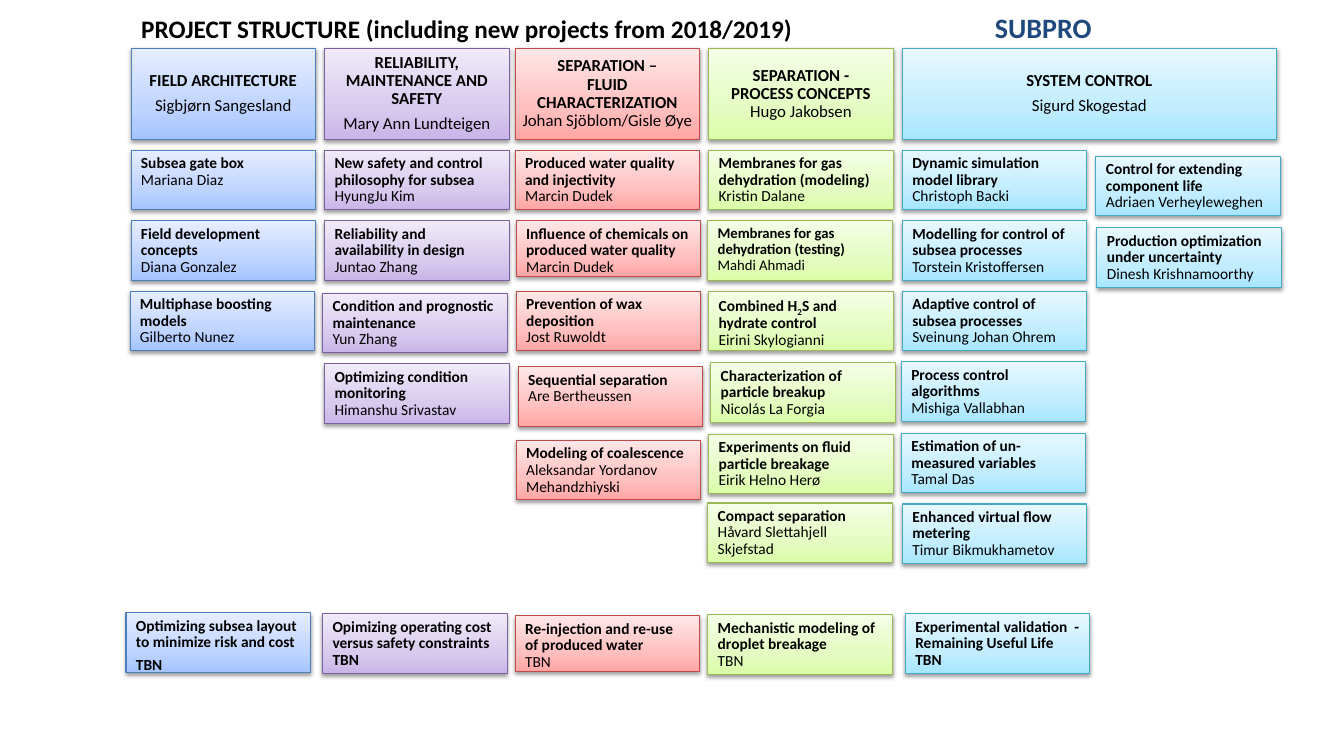
from copy import deepcopy

from lxml.etree import SubElement
from pptx import Presentation
from pptx.dml.color import RGBColor
from pptx.enum.shapes import MSO_SHAPE
from pptx.enum.text import MSO_ANCHOR, MSO_AUTO_SIZE, PP_ALIGN
from pptx.oxml.ns import qn
from pptx.util import Inches, Pt

BLACK = RGBColor(0x00, 0x00, 0x00)
NAVY = RGBColor(0x1F, 0x49, 0x7D)

# Each palette: line, then fill from bottom to top
BLUE = (RGBColor(0x4B, 0x7E, 0xBC), RGBColor(0xA4, 0xC4, 0xFF),
        RGBColor(0xBF, 0xD4, 0xFF), RGBColor(0xE6, 0xEE, 0xFF))
PURPLE = (RGBColor(0x7D, 0x60, 0xA0), RGBColor(0xC9, 0xB5, 0xE8),
          RGBColor(0xD8, 0xCB, 0xEE), RGBColor(0xF0, 0xEA, 0xF9))
RED = (RGBColor(0xBF, 0x4C, 0x48), RGBColor(0xFF, 0xA6, 0xA5),
       RGBColor(0xFF, 0xC0, 0xBF), RGBColor(0xFF, 0xE7, 0xE7))
GREEN = (RGBColor(0x98, 0xB9, 0x55), RGBColor(0xDA, 0xFD, 0xA7),
         RGBColor(0xE4, 0xFC, 0xC2), RGBColor(0xF5, 0xFF, 0xE7))
CYAN = (RGBColor(0x46, 0xAA, 0xC5), RGBColor(0xA7, 0xE6, 0xFF),
        RGBColor(0xC1, 0xED, 0xFF), RGBColor(0xE7, 0xF8, 0xFF))

# Grid in inches; LAST is the row of projects to be named
LEFT, TOP, PITCH, STEP = 1.3, 1.49, 1.91, 0.7
WIDE, TALL, SHORT = 1.83, 0.59, 0.55
LAST = 6.57

# Palette, title, leader, width, gap after title, nudge
HEADS = [
    (BLUE, "FIELD ARCHITECTURE", "Sigbjørn Sangesland", WIDE, 5, 0),
    (PURPLE, "RELIABILITY, MAINTENANCE AND SAFETY", "Mary Ann Lundteigen", WIDE, 5, 0.01),
    (RED, "SEPARATION –\vFLUID CHARACTERIZATION", "Johan Sjöblom/Gisle Øye", WIDE, 0, -0.01),
    (GREEN, "SEPARATION -\vPROCESS CONCEPTS", "Hugo Jakobsen", WIDE, 0, 0),
    (CYAN, "SYSTEM CONTROL", "Sigurd Skogestad", 3.71, 5, 0.01),
]

# Per column: row, title, person, nudge across, nudge down, options
CARDS = [
    (BLUE, [
        (0, "Subsea gate box", "Mariana Diaz", 0, 0, {}),
        (1, "Field development\vconcepts", "Diana Gonzalez", 0, 0, {}),
        (2, "Multiphase boosting models", "Gilberto Nunez", -0.01, 0, {}),
        (LAST, "Optimizing subsea layout to minimize risk and cost", "TBN",
         -0.05, -0.01, {"bold": True, "gap": 4.5}),
    ]),
    (PURPLE, [
        (0, "New safety and control philosophy for subsea", "HyungJu Kim", 0.01, 0, {}),
        (1, "Reliability and availability in design", "Juntao Zhang", 0.01, 0, {}),
        (2, "Condition and prognostic maintenance", "Yun Zhang", -0.01, 0.02, {}),
        (3, "Optimizing condition monitoring", "Himanshu Srivastav", 0.01, 0.02, {}),
        (LAST, "Opimizing operating cost versus safety constraints", "TBN",
         -0.01, 0, {"bold": True}),
    ]),
    (RED, [
        (0, "Produced water quality and injectivity", "Marcin Dudek", -0.01, 0, {}),
        (1, "Influence of chemicals on produced water quality", "Marcin Dudek",
         0, 0, {"high": SHORT}),
        (2, "Prevention of wax deposition", "Jost Ruwoldt", 0, 0, {}),
        (3, "Sequential separation", "Are Bertheussen", 0.02, 0.05, {}),
        (4, "Modeling of coalescence", "Aleksandar Yordanov Mehandzhiyski", 0, 0.08, {}),
        (LAST, "Re-injection and re-use of produced water", "TBN",
         -0.01, 0.02, {"high": SHORT}),
    ]),
    (GREEN, [
        (0, "Membranes for gas dehydration (modeling)", "Kristin Dalane", 0, 0, {}),
        (1, "Membranes for gas dehydration (testing)", "Mahdi Ahmadi",
         -0.01, 0, {"size": 10.5}),
        (2, "Combined H|2|S and hydrate control", "Eirini Skylogianni", 0, 0, {}),
        (3, "Characterization of particle breakup", "Nicolás La Forgia", 0.02, 0.01, {}),
        (4, "Experiments on fluid particle breakage", "Eirik Helno Herø", 0, 0.02, {}),
        (5, "Compact separation", "Håvard Slettahjell Skjefstad", -0.01, 0, {}),
        (LAST, "Mechanistic modeling of droplet breakage", "TBN", -0.01, 0.01, {}),
    ]),
    (CYAN, [
        (0, "Dynamic simulation model library", "Christoph Backi", 0.01, 0, {}),
        (1, "Modelling for control of subsea processes", "Torstein Kristoffersen", 0.01, 0, {}),
        (2, "Adaptive control of subsea processes", "Sveinung Johan Ohrem", 0.01, 0, {}),
        (3, "Process control algorithms", "Mishiga Vallabhan", 0, 0, {}),
        (4, "Estimation of un-measured variables", "Tamal Das", 0, 0.01, {}),
        (5, "Enhanced virtual flow metering", "Timur Bikmukhametov", 0.01, 0.01, {}),
        (LAST, "Experimental validation  - Remaining Useful Life", "TBN",
         0.04, 0, {"bold": True}),
    ]),
    (CYAN, [
        (0, "Control for extending component life", "Adriaen Verheyleweghen", 0.02, 0.06, {}),
        (1, "Production optimization under uncertainty", "Dinesh Krishnamoorthy",
         0.03, 0.07, {}),
    ]),
]


class Board:
    """Style and slide of the project chart."""

    font = "Calibri"

    def __init__(self, deck):
        self.slide = deck.slides.add_slide(deck.slide_layouts[5])

    def style(self, para, size, bold, color=BLACK):
        for run in para.runs:
            font = run.font
            font.name, font.size, font.bold = self.font, Pt(size), bold
            font.color.rgb = color

    def label(self, shape, text, box, size, color=BLACK):
        shape.left, shape.top, shape.width, shape.height = map(Inches, box)
        frame = shape.text_frame
        frame.text = text
        frame.word_wrap = False
        frame.auto_size = MSO_AUTO_SIZE.SHAPE_TO_FIT_TEXT
        frame.vertical_anchor = MSO_ANCHOR.TOP
        frame.paragraphs[0].alignment = PP_ALIGN.LEFT
        self.style(frame.paragraphs[0], size, True, color)

    def title(self, text, box, size):
        self.label(self.slide.shapes.title, text, box, size)

    def note(self, text, box, size, color):
        shape = self.slide.shapes.add_textbox(*map(Inches, box))
        self.label(shape, text, box, size, color)

    def panel(self, box, colors):
        shape = self.slide.shapes.add_shape(MSO_SHAPE.RECTANGLE, *map(Inches, box))
        shape.line.color.rgb = colors[0]
        shape.line.width = Pt(0.75)
        # Three-stop vertical gradient
        fill = shape.fill
        fill.gradient()
        fill.gradient_angle = 90
        stops = shape._element.spPr.find(".//" + qn("a:gsLst"))
        stops.insert(1, deepcopy(stops[0]))
        for stop, place, color in zip(fill.gradient_stops, (0, 0.35, 1), colors[1:]):
            stop.position = place
            stop.color.rgb = color
        # Soft shadow below
        shape.shadow.inherit = False
        effect = shape._element.spPr.find(qn("a:effectLst"))
        shade = SubElement(effect, qn("a:outerShdw"), blurRad=str(Pt(3.1)),
                           dist=str(Pt(1.6)), dir="5400000", rotWithShape="0")
        tint = SubElement(shade, qn("a:srgbClr"), val=str(BLACK))
        SubElement(tint, qn("a:alpha"), val="38000")
        return shape

    def fill(self, shape, title, name, size, align, gap=0, bold=False):
        frame = shape.text_frame
        frame.word_wrap = True
        head, *rest = title.split("|")
        first, last = frame.paragraphs[0], frame.add_paragraph()
        first.text, last.text = head, name
        for k, part in enumerate(rest):
            run = first.add_run()
            run.text = part
            if k % 2 == 0:
                run._r.get_or_add_rPr().set("baseline", "-25000")
        for para, heavy in ((first, True), (last, bold)):
            para.alignment, para.line_spacing = align, 0.9
            para.space_after = Pt(gap)
            self.style(para, size, heavy)

    def head(self, col, colors, title, name, wide, gap, shift):
        shape = self.panel((LEFT + col * PITCH + shift, 0.48, wide, 0.9), colors)
        frame = shape.text_frame
        frame.vertical_anchor = MSO_ANCHOR.MIDDLE
        frame.margin_left = frame.margin_right = Inches(0.01)
        frame.margin_top = frame.margin_bottom = Inches(0.01)
        self.fill(shape, title, name, 12, PP_ALIGN.CENTER, gap)

    def card(self, col, colors, row, title, name, across, down,
             high=TALL, size=11, gap=0, bold=False):
        box = (LEFT + col * PITCH + across, TOP + row * STEP + down, WIDE, high)
        shape = self.panel(box, colors)
        shape.text_frame.vertical_anchor = MSO_ANCHOR.TOP
        self.fill(shape, title, name, size, PP_ALIGN.LEFT, gap, bold)


def main():
    deck = Presentation()
    deck.slide_width, deck.slide_height = Inches(13.33), Inches(7.5)
    board = Board(deck)

    # Title line
    board.title("PROJECT STRUCTURE (including new projects from 2018/2019)",
                (1.3, 0.08, 6.72, 0.4), 18)
    board.note("SUBPRO", (9.77, 0.06, 1.17, 0.44), 20, NAVY)

    # Research areas
    for col, area in enumerate(HEADS):
        board.head(col, *area)

    # Projects
    for col, (colors, cards) in enumerate(CARDS):
        for *card, extra in cards:
            board.card(col, colors, *card, **extra)

    deck.save("out.pptx")


if __name__ == "__main__":
    main()
